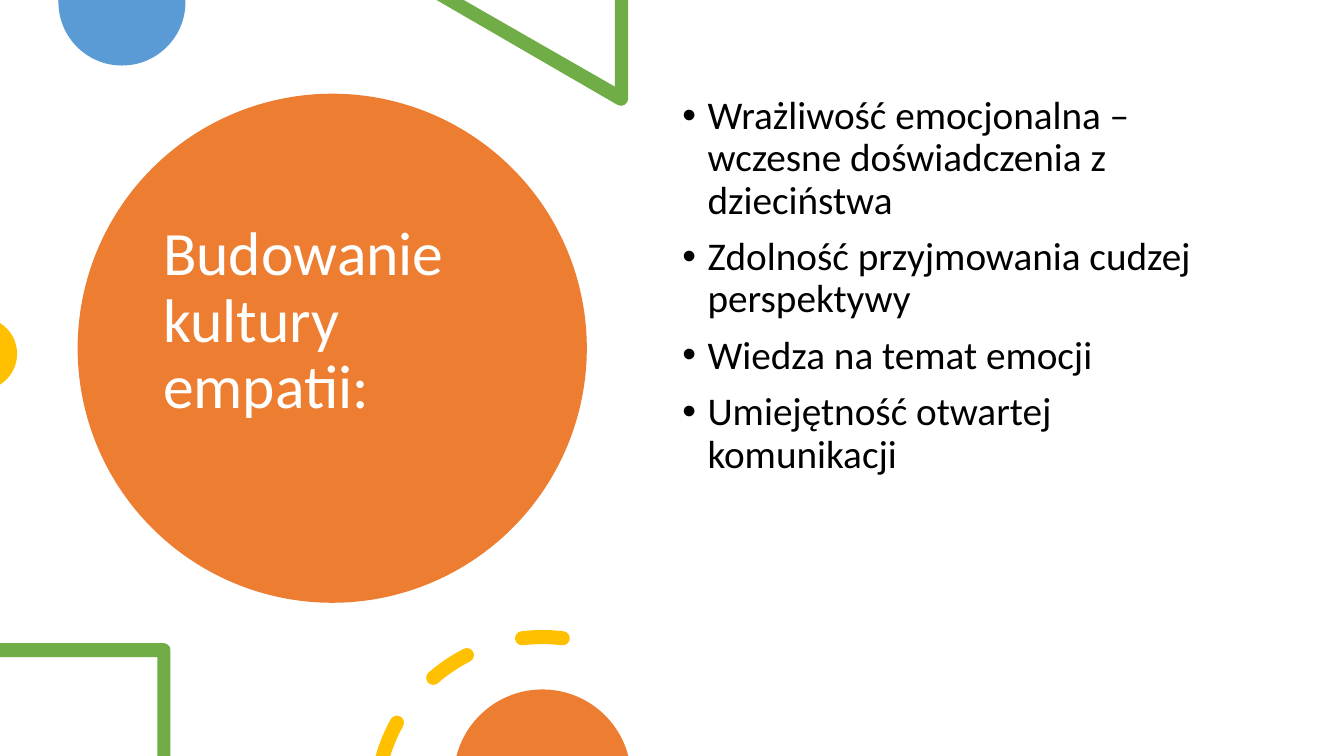
import math

import pptx
import pptx.dml.color
import pptx.enum.shapes
import pptx.enum.text
import pptx.oxml
import pptx.oxml.ns
import pptx.util

PX = 9144
WIDTH, HEIGHT = 1333, 750
ORANGE, BLUE, GREEN, YELLOW = "ED7D31", "5B9BD5", "70AD47", "FFC000"
WHITE, BLACK = "FFFFFF", "000000"
FONT = "Calibri"
TITLE = "Budowanie kultury empatii:"
POINTS = [
    "Wrażliwość emocjonalna – wczesne doświadczenia z dzieciństwa",
    "Zdolność przyjmowania cudzej perspektywy",
    "Wiedza na temat emocji",
    "Umiejętność otwartej komunikacji",
]


def px(length):
    return pptx.util.Emu(round(length * PX))


def color(value):
    return pptx.dml.color.RGBColor.from_string(value)


def paint(shape, fill):
    shape.shadow.inherit = False
    shape.fill.solid()
    shape.fill.fore_color.rgb = color(fill)
    shape.line.fill.background()


def polar(cx, cy, radius, angle):
    return cx + radius * math.cos(angle), cy + radius * math.sin(angle)


def lines(*points):
    return [(point,) for point in points]


def curves(cx, cy, radius, start, end):
    count = math.ceil(abs(end - start) / 90)
    sweep = math.radians(end - start) / count
    reach = radius * 4 / 3 * math.tan(sweep / 4)
    steps = []
    for i in range(count):
        a = math.radians(start) + sweep * i
        b = a + sweep
        x1, y1 = polar(cx, cy, radius, a)
        x2, y2 = polar(cx, cy, radius, b)
        leaving = (x1 - reach * math.sin(a), y1 + reach * math.cos(a))
        arriving = (x2 + reach * math.sin(b), y2 - reach * math.cos(b))
        steps.append((leaving, arriving, (x2, y2)))
    return steps


def arc(cx, cy, radius, start, end):
    return lines(polar(cx, cy, radius, math.radians(start))) + curves(cx, cy, radius, start, end)


def ring_dash(cx, cy, radius, half, start, end):
    outer, inner = radius + half, radius - half
    outer_cut, inner_cut = (180 + math.degrees(math.asin((cy - HEIGHT) / r)) for r in (outer, inner))
    last_cap = curves(*polar(cx, cy, radius, math.radians(end)), half, end, end + 180)
    outline = arc(cx, cy, outer, max(start, outer_cut), end) + last_cap
    if start < outer_cut:
        return outline + curves(cx, cy, inner, end, inner_cut)
    first_cap = curves(*polar(cx, cy, radius, math.radians(start)), half, start + 180, start + 360)
    return outline + curves(cx, cy, inner, end, start) + first_cap


def bend(segment, controls, shape):
    curve = pptx.oxml.parse_xml(f"<a:cubicBezTo {pptx.oxml.ns.nsdecls('a')}/>")
    for x, y in controls:
        point = curve.makeelement(pptx.oxml.ns.qn("a:pt"))
        point.set("x", str(px(x) - shape.left))
        point.set("y", str(px(y) - shape.top))
        curve.append(point)
    segment.getparent().replace(segment, curve)


def add_outlines(slide, fill, *outlines):
    contours = [[(px(step[-1][0]), px(step[-1][1])) for step in outline] for outline in outlines]
    builder = slide.shapes.build_freeform(*contours[0][0])
    builder.add_line_segments(contours[0][1:])
    for contour in contours[1:]:
        builder.move_to(*contour[0])
        builder.add_line_segments(contour[1:])
    shape = builder.convert_to_shape()
    paint(shape, fill)
    segments = list(shape._element.iter(pptx.oxml.ns.qn("a:lnTo")))
    steps = [step for outline in outlines for step in outline[1:]]
    for segment, step in zip(segments, steps):
        if len(step) == 3:
            bend(segment, step, shape)


def add_circle(slide, left, top, diameter, fill):
    oval = pptx.enum.shapes.MSO_SHAPE.OVAL
    circle = slide.shapes.add_shape(oval, px(left), px(top), px(diameter), px(diameter))
    paint(circle, fill)


def add_text(slide, left, top, width, height, paragraphs, size, fill):
    frame = slide.shapes.add_textbox(px(left), px(top), px(width), px(height)).text_frame
    frame.word_wrap = True
    frame.text = "\n".join(paragraphs)
    for paragraph in frame.paragraphs:
        paragraph.line_spacing = 0.9
        font = paragraph.runs[0].font
        font.name = FONT
        font.size = pptx.util.Pt(size)
        font.color.rgb = color(fill)
    return frame


def add_bullet(paragraph, indent):
    paragraph.space_before = pptx.util.Pt(10)
    properties = paragraph._p.get_or_add_pPr()
    properties.set("marL", str(px(indent)))
    properties.set("indent", str(-px(indent)))
    namespace = pptx.oxml.ns.nsdecls("a")
    for xml in (f'<a:buFont {namespace} typeface="Arial"/>', f'<a:buChar {namespace} char="•"/>'):
        properties.append(pptx.oxml.parse_xml(xml))


def main():
    deck = pptx.Presentation()
    deck.slide_width, deck.slide_height = px(WIDTH), px(HEIGHT)
    slide = deck.slides.add_slide(deck.slide_layouts[6])

    add_circle(slide, 77, 93, 505, ORANGE)
    title = add_text(slide, 152, 135, 354, 445, [TITLE], 44, WHITE)
    title.vertical_anchor = pptx.enum.text.MSO_ANCHOR.MIDDLE
    title.margin_bottom = px(80)

    add_outlines(slide, BLUE, lines((184, 0)) + arc(121, 2, 63, 0, 180) + lines((58, 0)))
    triangle = lines((623, 0), (610, 0), (610, 86), (460, 0), (433, 0))
    add_outlines(slide, GREEN, triangle + arc(616, 98, 7, 120, 0))
    add_outlines(slide, YELLOW, arc(-19, 351, 36, -58, 58))

    body = add_text(slide, 667, 90, 575, 535, POINTS, 28, BLACK)
    for paragraph in body.paragraphs:
        add_bullet(paragraph, 25)

    square = lines((0, 638), (0, 652), (156, 652), (156, 750), (169, 750))
    add_outlines(slide, GREEN, square + arc(162, 645, 7, 0, -90))
    dashes = [ring_dash(538, 797, 165, 7, start, start + 14) for start in (195, 229, 263)]
    add_outlines(slide, YELLOW, *dashes)
    add_outlines(slide, ORANGE, arc(538, 772, 88, 194.5, 345.5))

    deck.save("out.pptx")


if __name__ == "__main__":
    main()
